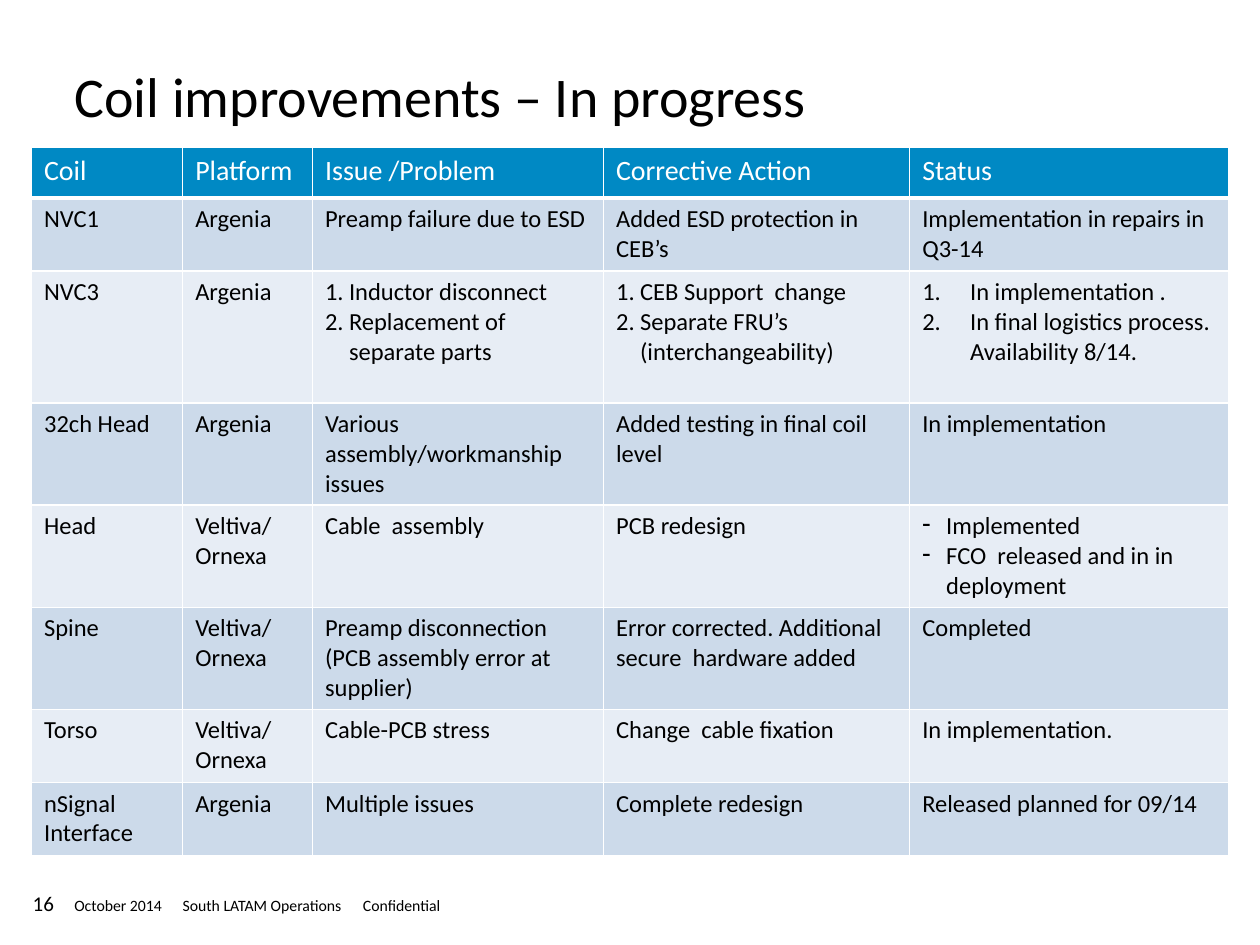
import pptx
import pptx.dml.color
import pptx.enum.text
import pptx.oxml
import pptx.oxml.ns
import pptx.util
from pptx.util import Inches

RGBColor = pptx.dml.color.RGBColor
BLACK = RGBColor(0x00, 0x00, 0x00)
WHITE = RGBColor(0xFF, 0xFF, 0xFF)
HEADER_BLUE = RGBColor(0x00, 0x89, 0xC4)
BAND_DARK = RGBColor(0xCC, 0xDA, 0xEA)
BAND_LIGHT = RGBColor(0xE7, 0xED, 0xF5)

FONT = "Calibri"
NUMBERED = '<a:buAutoNum %s type="arabicPeriod"/>'
DASHED = '<a:buChar %s char="-"/>'

COLUMN_WIDTHS = [1.2, 1.03, 2.31, 2.43, 2.53]
ROW_HEIGHTS = [0.4, 0.58, 1.05, 0.81, 0.81, 0.81, 0.58, 0.58]
ROWS = [
    ["Coil", "Platform", "Issue /Problem", "Corrective Action", "Status"],
    ["NVC1", "Argenia", "Preamp failure due to ESD", "Added ESD protection in CEB’s",
     "Implementation in repairs in Q3-14"],
    ["NVC3", "Argenia",
     (NUMBERED, 0.19, ["Inductor disconnect", "Replacement of separate parts"]),
     (NUMBERED, 0.19, ["CEB Support  change", "Separate FRU’s (interchangeability)"]),
     (NUMBERED, 0.38, ["In implementation .",
                       "In final logistics process. Availability 8/14."])],
    ["32ch Head", "Argenia", "Various assembly/workmanship issues",
     "Added testing in final coil level", "In implementation"],
    ["Head", "Veltiva/ Ornexa", "Cable  assembly", "PCB redesign",
     (DASHED, 0.19, ["Implemented", "FCO  released and in in deployment"])],
    ["Spine", "Veltiva/ Ornexa", "Preamp disconnection (PCB assembly error at supplier)",
     "Error corrected. Additional secure  hardware added", "Completed"],
    ["Torso", "Veltiva/ Ornexa", "Cable-PCB stress", "Change  cable fixation",
     "In implementation."],
    ["nSignal Interface", "Argenia", "Multiple issues", "Complete redesign",
     "Released planned for 09/14"],
]


def add_xml(parent, xml):
    el = pptx.oxml.parse_xml(xml % pptx.oxml.ns.nsdecls("a"))
    parent.append(el)
    return el


def set_font(p, size, color):
    p.font.name = FONT
    p.font.size = pptx.util.Pt(size)
    p.font.color.rgb = color


def add_text(slide, text, left, top, width, height, size, tabs=()):
    tf = slide.shapes.add_textbox(
        Inches(left), Inches(top), Inches(width), Inches(height)).text_frame
    tf.word_wrap = True
    tf.vertical_anchor = pptx.enum.text.MSO_ANCHOR.TOP
    tf.margin_left = tf.margin_right = tf.margin_top = tf.margin_bottom = 0
    p = tf.paragraphs[0]
    p.text = text
    if tabs:
        tab_list = add_xml(p._p.get_or_add_pPr(), "<a:tabLst %s/>")
        for position in tabs:
            tab = add_xml(tab_list, '<a:tab %s algn="l"/>')
            tab.set("pos", str(Inches(position)))
    set_font(p, size, BLACK)


def set_borders(cell, bottom_width):
    tcPr = cell._tc.get_or_add_tcPr()
    for side, width in (("L", 1), ("R", 1), ("T", 1), ("B", bottom_width)):
        ln = add_xml(tcPr, f"<a:ln{side} %s><a:solidFill>"
                           f'<a:srgbClr val="{WHITE}"/></a:solidFill></a:ln{side}>')
        ln.set("w", str(pptx.util.Pt(width)))


def fill_cell(cell, content, size, color, fill, bottom_width):
    set_borders(cell, bottom_width)
    cell.fill.solid()
    cell.fill.fore_color.rgb = fill
    bullet, indent, items = (None, 0, [content]) if isinstance(content, str) else content
    tf = cell.text_frame
    tf.text = "\n".join(items)
    for p in tf.paragraphs:
        if bullet:
            pPr = p._p.get_or_add_pPr()
            pPr.set("marL", str(Inches(indent)))
            pPr.set("indent", str(-Inches(indent)))
            add_xml(pPr, bullet)
        set_font(p, size, color)


def add_coil_table(slide):
    table = slide.shapes.add_table(
        len(ROWS), len(COLUMN_WIDTHS), Inches(0.25), Inches(1.17),
        Inches(sum(COLUMN_WIDTHS)), Inches(sum(ROW_HEIGHTS))).table
    for column, width in zip(table.columns, COLUMN_WIDTHS):
        column.width = Inches(width)
    for i, (row, height) in enumerate(zip(table.rows, ROW_HEIGHTS)):
        row.height = Inches(height)
        if i == 0:
            style = (16, WHITE, HEADER_BLUE, 3)
        else:
            style = (14, BLACK, BAND_DARK if i % 2 else BAND_LIGHT, 1)
        for cell, content in zip(row.cells, ROWS[i]):
            fill_cell(cell, content, *style)


def main():
    prs = pptx.Presentation()
    prs.slide_width = Inches(10)
    prs.slide_height = Inches(7.5)
    slide = prs.slides.add_slide(prs.slide_layouts[6])
    add_text(slide, "16", 0.26, 7.07, 0.55, 0.2, 12)
    add_text(slide, "October 2014\tSouth LATAM Operations\tConfidential",
             0.59, 7.11, 4.96, 0.15, 9, tabs=(0.86, 2.29))
    add_text(slide, "Coil improvements – In progress", 0.59, 0.49, 8.82, 1.1, 32)
    add_coil_table(slide)
    prs.save("out.pptx")


if __name__ == "__main__":
    main()
